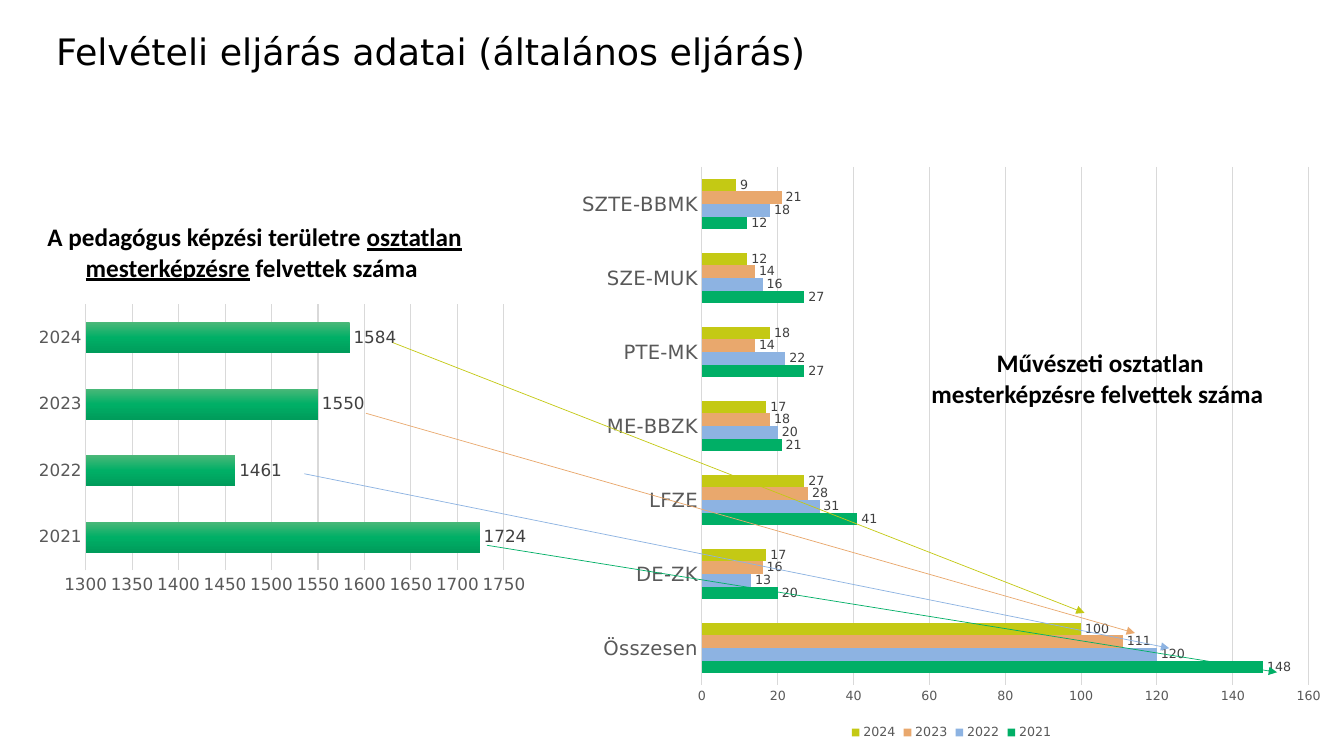
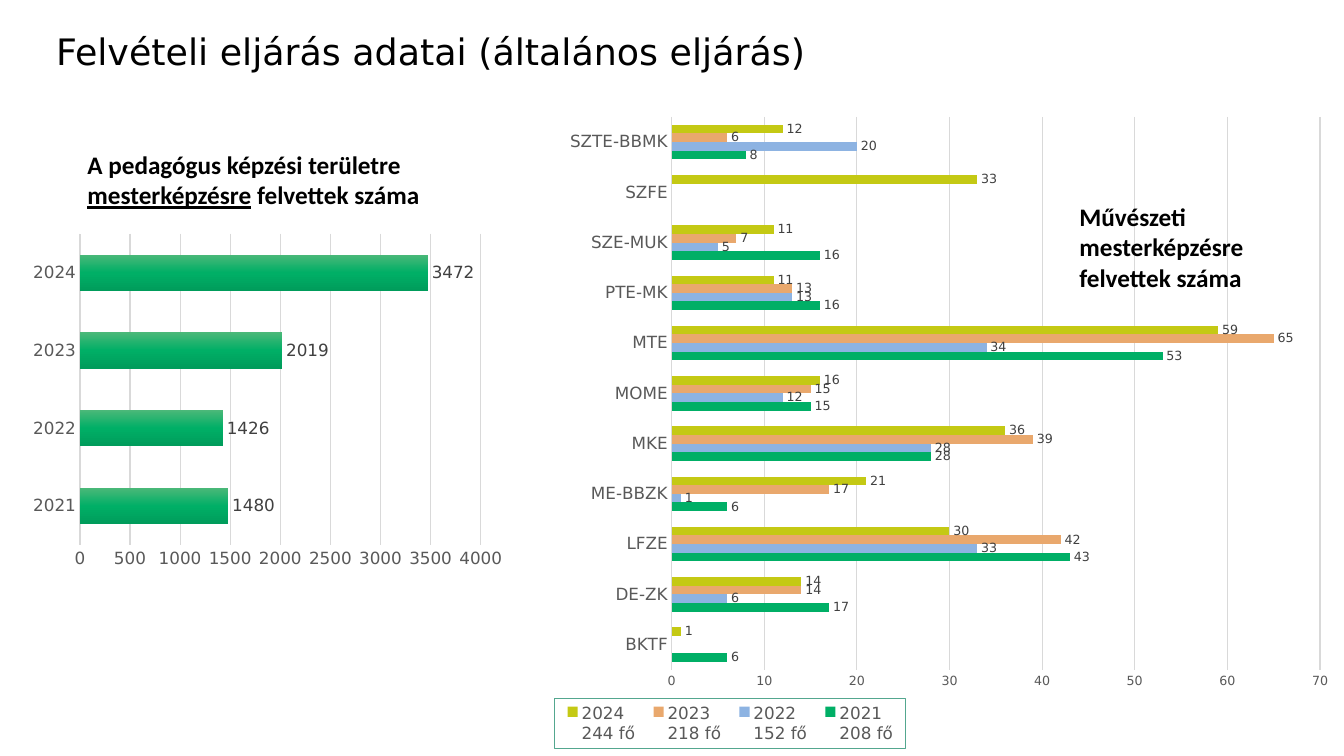
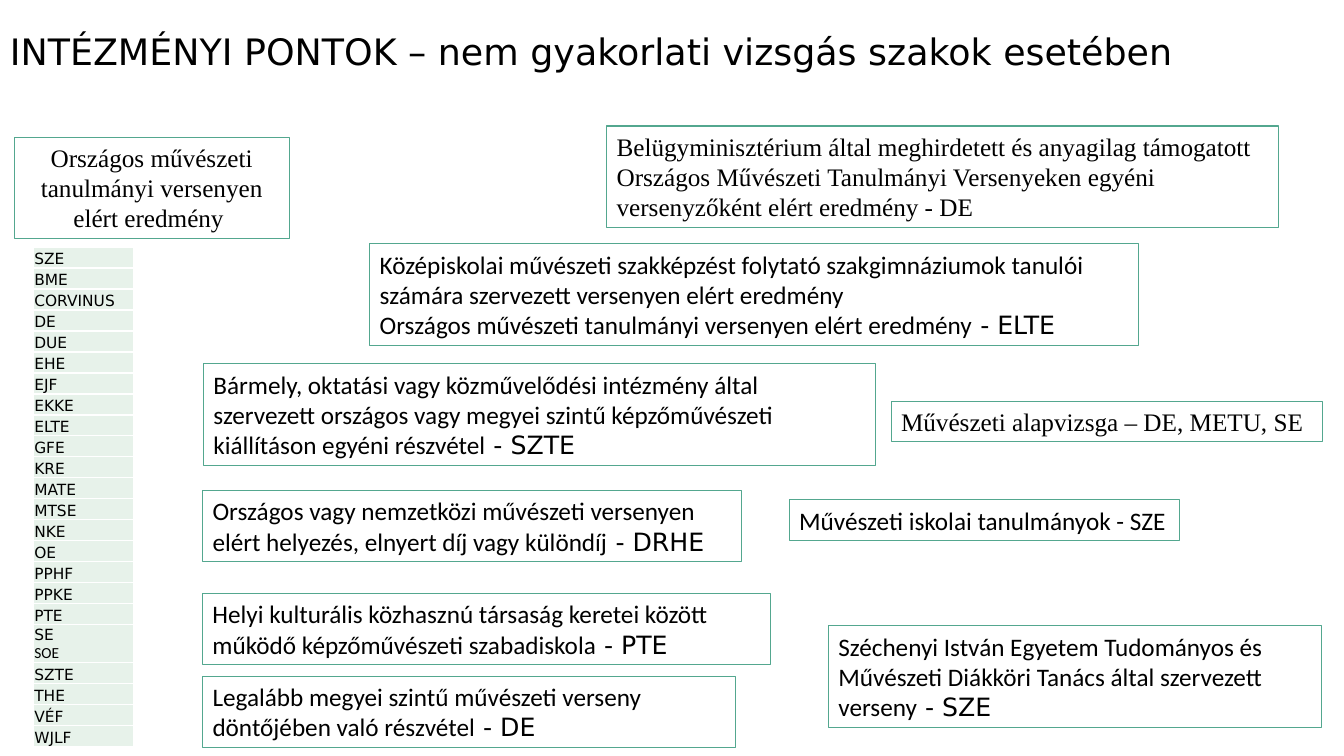
from copy import deepcopy

from lxml import etree
from pptx import Presentation
from pptx.chart.data import CategoryChartData
from pptx.dml.color import RGBColor
from pptx.enum.chart import XL_CHART_TYPE, XL_LABEL_POSITION, XL_LEGEND_POSITION, XL_TICK_MARK
from pptx.enum.shapes import MSO_CONNECTOR, MSO_SHAPE
from pptx.enum.text import MSO_ANCHOR, PP_ALIGN
from pptx.oxml import parse_xml
from pptx.oxml.ns import nsdecls, qn
from pptx.util import Pt

BARS = XL_CHART_TYPE.BAR_CLUSTERED
OUT_END = XL_LABEL_POSITION.OUTSIDE_END
BOTTOM = XL_LEGEND_POSITION.BOTTOM
NO_TICK = XL_TICK_MARK.NONE
STRAIGHT = MSO_CONNECTOR.STRAIGHT
RECT = MSO_SHAPE.RECTANGLE
MIDDLE, LOW = MSO_ANCHOR.MIDDLE, MSO_ANCHOR.BOTTOM
LEFT, CENTER = PP_ALIGN.LEFT, PP_ALIGN.CENTER

SANS, BODY, SERIF = "DejaVu Sans", "Calibri", "Times New Roman"
BLACK, WHITE, GRAY, DARK, GRID = "000000", "FFFFFF", "595959", "404040", "D9D9D9"
FRAME, CELL = "53A78F", "E7F2EA"
YEARS = ["2021", "2022", "2023", "2024"]
HUES = ["00AF66", "8DB3E2", "E9A86D", "C4C914"]
SHADES = [(0, "4BB879"), (0.5, "00AF66"), (1, "009C5B")]
LINE_H, PAD = 21.8, 7.2

ADMIT = "Felvételi eljárás adatai (általános eljárás)"
BOLD = {"name": BODY, "size": Pt(18), "bold": True}
LINED = {**BOLD, "underline": True}

# Charts: frame in points, plot area as fractions of the frame
CHART_PAGES = [
    {
        "total": {
            "at": (21.6, 213.1, 360, 216), "plot": (0.11, 0.02, 0.83, 0.88),
            "cats": YEARS, "series": [("Felvettek", [1724, 1461, 1550, 1584])],
            "scale": (1300, 1750, 50), "sizes": (12, 12, 12),
        },
        "arts": {
            "at": (405.4, 110.9, 548.6, 420.5), "plot": (0.175, 0.02, 0.79, 0.88),
            "cats": ["Összesen", "DE-ZK", "LFZE", "ME-BBZK", "PTE-MK", "SZE-MUK", "SZTE-BBMK"],
            "series": list(zip(YEARS, [
                [148, 20, 41, 21, 27, 27, 12],
                [120, 13, 31, 20, 22, 16, 18],
                [111, 16, 28, 18, 14, 14, 21],
                [100, 17, 27, 17, 18, 12, 9],
            ])),
            "scale": (0, 160, 20), "sizes": (14, 9, 9), "legend": 9,
        },
        "labels": [
            ((21.6, 154.8, 320.4), 2, CENTER, [
                ("A pedagógus képzési területre ", BOLD),
                ("osztatlan mesterképzésre", LINED), (" felvettek száma ", BOLD)]),
            ((652.3, 244.8, 267.1), 2, CENTER, [
                ("Művészeti osztatlan mesterképzésre felvettek száma ", BOLD)]),
        ],
        "arrows": [
            (347.8, 389.5, 912.2, 480.2),
            (217.4, 338.4, 835.2, 463),
            (261.4, 295.2, 810.7, 452.2),
            (280.8, 244.8, 774.7, 437.8),
        ],
    },
    {
        "total": {
            "at": (17.3, 162, 349.2, 249.8), "plot": (0.114, 0.02, 0.82, 0.89),
            "cats": YEARS, "series": [("Felvettek", [1480, 1426, 2019, 3472])],
            "scale": (0, 4000, 500), "sizes": (12, 12, 12),
        },
        "arts": {
            "at": (396, 74.2, 563.8, 465.8), "plot": (0.148, 0.02, 0.822, 0.848),
            "cats": ["BKTF", "DE-ZK", "LFZE", "ME-BBZK", "MKE", "MOME", "MTE",
                     "PTE-MK", "SZE-MUK", "SZFE", "SZTE-BBMK"],
            "series": [
                ("2021\n208 fő", [6, 17, 43, 6, 28, 15, 53, 16, 16, None, 8]),
                ("2022\n152 fő", [None, 6, 33, 1, 28, 12, 34, 13, 5, None, 20]),
                ("2023\n218 fő", [None, 14, 42, 17, 39, 15, 65, 13, 7, None, 6]),
                ("2024\n244 fő", [1, 14, 30, 21, 36, 16, 59, 11, 11, 33, 12]),
            ],
            "scale": (0, 70, 10), "sizes": (12, 9, 9), "legend": 12,
            "key": (0, 0.912, 0.445, 0.076),
        },
        "labels": [
            ((55.4, 103, 270.7), 2, LEFT, [
                ("A pedagógus képzési területre ", BOLD),
                ("mesterképzésre", LINED), (" felvettek száma", BOLD)]),
            ((763.9, 140.4, 195.8), 3, LEFT, [
                ("Művészeti mesterképzésre felvettek száma", BOLD)]),
        ],
        "arrows": [],
    },
]

POINTS = "INTÉZMÉNYI PONTOK – nem gyakorlati vizsgás szakok esetében"
SCHOOLS = ["SZE", "BME", "CORVINUS", "DE", "DUE", "EHE", "EJF", "EKKE", "ELTE", "GFE", "KRE",
           "MATE", "MTSE", "NKE", "OE", "PPHF", "PPKE", "PTE", "SE\nSOE", "SZTE", "THE", "VÉF",
           "WJLF"]
# Left, top, width; line count; font; text; school
BOXES = [
    ((10.1, 97.9, 196.6), 3, SERIF, "Országos művészeti tanulmányi versenyen elért eredmény ", ""),
    ((433.4, 90, 480.2), 3, SERIF,
     "Belügyminisztérium által meghirdetett és anyagilag támogatott Országos Művészeti "
     "Tanulmányi Versenyeken egyéni versenyzőként elért eredmény - DE", ""),
    ((145.4, 259.9, 480.2), 3, BODY,
     "Bármely, oktatási vagy közművelődési intézmény által szervezett országos vagy megyei "
     "szintű képzőművészeti kiállításon egyéni részvétel", " - SZTE"),
    ((264.2, 174.2, 549.4), 3, BODY,
     "Középiskolai művészeti szakképzést folytató szakgimnáziumok tanulói számára szervezett "
     "versenyen elért eredmény\nOrszágos művészeti tanulmányi versenyen elért eredmény",
     " - ELTE"),
    ((144.7, 483.1, 380.9), 2, BODY,
     "Legalább megyei szintű művészeti verseny döntőjében való részvétel", " - DE"),
    ((636.5, 286.6, 308.2), 1, SERIF, "Művészeti alapvizsga – DE, METU, SE", ""),
    ((563.8, 357.1, 278.6), 1, BODY, "Művészeti iskolai tanulmányok - SZE", ""),
    ((144.7, 350.6, 385.2), 2, BODY,
     "Országos vagy nemzetközi művészeti versenyen elért helyezés, elnyert díj vagy különdíj",
     " - DRHE"),
    ((591.8, 447.1, 352.1), 3, BODY,
     "Széchenyi István Egyetem Tudományos és Művészeti Diákköri Tanács által szervezett verseny",
     " - SZE"),
    ((144.7, 424.1, 405.4), 2, BODY,
     "Helyi kulturális közhasznú társaság keretei között működő képzőművészeti szabadiskola",
     " - PTE"),
]


def rgb(code):
    return RGBColor.from_string(code)


def pts(vals):
    return [Pt(v) for v in vals]


def style(font, color=BLACK, **vals):
    for key, val in vals.items():
        setattr(font, key, val)
    font.color.rgb = rgb(color)


def stroke(line, color, width):
    line.color.rgb = rgb(color)
    line.width = Pt(width)


def write(para, runs):
    """Add (text, format) runs; a newline becomes a line break."""
    for text, form in runs:
        for num, part in enumerate(text.split("\n")):
            if num:
                para.add_line_break()
            run = para.add_run()
            run.text = part
            style(run.font, **form)


def add_title(slide, text, left=33, width=828):
    frame = slide.shapes.add_textbox(*pts((left, 0, width, 74))).text_frame
    frame.word_wrap = True
    frame.vertical_anchor = MIDDLE
    frame.margin_top = Pt(5.8)
    para = frame.paragraphs[0]
    para.line_spacing = 0.9
    write(para, [(text, {"name": SANS, "size": Pt(26)})])


def add_text(slide, spot, lines, align, runs, framed=False):
    area = pts((*spot, PAD + LINE_H * lines))
    if framed:
        shape = slide.shapes.add_shape(RECT, *area)
        shape.shadow.inherit = False
        shape.fill.background()
        stroke(shape.line, FRAME, 0.75)
    else:
        shape = slide.shapes.add_textbox(*area)
    frame = shape.text_frame
    frame.word_wrap = True
    frame.vertical_anchor = MSO_ANCHOR.TOP
    para = frame.paragraphs[0]
    para.alignment = align
    write(para, runs)


def layout(area, inner=False):
    """Build a manual chart layout from fractions of the chart frame."""
    node = parse_xml(f"<c:layout {nsdecls('c')}><c:manualLayout/></c:layout>")
    vals = [("layoutTarget", "inner")] if inner else []
    vals += [("xMode", "edge"), ("yMode", "edge"), *zip("xywh", area)]
    for tag, val in vals:
        etree.SubElement(node[0], qn(f"c:{tag}")).set("val", str(val))
    return node


def drop_layout(node):
    for old in node.findall(qn("c:layout")):
        node.remove(old)


def shade(series):
    fill = series.format.fill
    fill.gradient()
    fill.gradient_angle = 270
    stops = next(series._element.iter(qn("a:gsLst")))
    stops.insert(1, deepcopy(stops[0]))
    for stop, (pos, color) in zip(fill.gradient_stops, SHADES):
        stop.position = pos
        stop.color.rgb = rgb(color)


def add_legend(chart, size, key):
    chart.has_legend = True
    legend = chart.legend
    legend.position = BOTTOM
    legend.include_in_layout = False
    style(legend.font, GRAY, name=SANS, size=Pt(size))
    if key:
        node = legend._element
        drop_layout(node)
        node.find(qn("c:legendPos")).addnext(layout(key))
        node.find(qn("c:overlay")).addnext(parse_xml(
            f"<c:spPr {nsdecls('c', 'a')}><a:ln w='9525'><a:solidFill>"
            f"<a:srgbClr val='{FRAME}'/></a:solidFill></a:ln></c:spPr>"))


def add_bars(slide, data):
    source = CategoryChartData()
    source.categories = data["cats"]
    for name, vals in data["series"]:
        source.add_series(name, vals)
    chart = slide.shapes.add_chart(BARS, *pts(data["at"]), source).chart
    style(chart.font, name=SANS, size=Pt(10))
    chart.has_title = False
    many = len(data["series"]) > 1
    cat_size, val_size, tag_size = data["sizes"]

    cat, val = chart.category_axis, chart.value_axis
    for axis, size in ((cat, cat_size), (val, val_size)):
        axis.major_tick_mark = axis.minor_tick_mark = NO_TICK
        style(axis.tick_labels.font, GRAY, name=SANS, size=Pt(size))
    stroke(cat.format.line, GRID, 0.75 if many else 1)
    val.format.line.fill.background()
    val.has_major_gridlines = True
    stroke(val.major_gridlines.format.line, GRID, 0.75)
    val.minimum_scale, val.maximum_scale, val.major_unit = data["scale"]

    plot = chart.plots[0]
    plot.vary_by_categories = False
    plot.gap_width, plot.overlap = (182, 0) if many else (115, -20)
    for series, hue in zip(plot.series, HUES):
        if many:
            series.format.fill.solid()
            series.format.fill.fore_color.rgb = rgb(hue)
        else:
            shade(series)
        tags = series.data_labels
        tags.show_value = True
        tags.position = OUT_END
        style(tags.font, DARK, name=SANS, size=Pt(tag_size))

    chart.has_legend = False
    if many:
        add_legend(chart, data["legend"], data.get("key"))
    area = chart._chartSpace.chart.plotArea
    drop_layout(area)
    area.insert(0, layout(data["plot"], inner=True))


def add_arrow(slide, ends, color):
    arrow = slide.shapes.add_connector(STRAIGHT, *pts(ends))
    stroke(arrow.line, color, 0.5)
    props = arrow._element.spPr
    etree.SubElement(props.find(qn("a:ln")), qn("a:tailEnd")).set("type", "triangle")
    etree.SubElement(props, qn("a:effectLst"))


def edge(cell):
    """Give a cell white borders; they must come before its fill."""
    props = cell._tc.get_or_add_tcPr()
    for num, side in enumerate(("lnL", "lnR", "lnT", "lnB")):
        props.insert(num, parse_xml(
            f"<a:{side} {nsdecls('a')} w='12700'><a:solidFill>"
            f"<a:srgbClr val='{WHITE}'/></a:solidFill></a:{side}>"))


def add_schools(slide):
    count, row_h = len(SCHOOLS), 15
    area = pts((23.8, 176.4, 71.3, row_h * count))
    table = slide.shapes.add_table(count, 1, *area).table
    table.first_row = table.horz_banding = False
    for num, text in enumerate(SCHOOLS):
        table.rows[num].height = Pt(row_h)
        cell = table.cell(num, 0)
        cell.fill.solid()
        cell.fill.fore_color.rgb = rgb(CELL)
        edge(cell)
        cell.vertical_anchor = LOW
        cell.margin_left = cell.margin_right = cell.margin_top = Pt(0.7)
        cell.margin_bottom = 0
        frame = cell.text_frame
        for pos, name in enumerate(text.split("\n")):
            para = frame.add_paragraph() if pos else frame.paragraphs[0]
            write(para, [(name, {"name": BODY if pos else SANS, "size": Pt(11)})])


def main():
    deck = Presentation()
    deck.slide_width, deck.slide_height = Pt(960), Pt(540)
    blank = deck.slide_layouts[6]

    for page in CHART_PAGES:
        slide = deck.slides.add_slide(blank)
        add_title(slide, ADMIT)
        add_bars(slide, page["total"])
        add_bars(slide, page["arts"])
        for label in page["labels"]:
            add_text(slide, *label)
        for ends, hue in zip(page["arrows"], HUES):
            add_arrow(slide, ends, hue)

    slide = deck.slides.add_slide(blank)
    add_title(slide, POINTS, 0, 861)
    add_schools(slide)
    for num, (spot, lines, font, text, school) in enumerate(BOXES):
        runs = [(text, {"name": font, "size": Pt(18)})]
        if school:
            runs.append((school, {"name": SANS, "size": Pt(18)}))
        add_text(slide, spot, lines, LEFT if num else CENTER, runs, framed=True)

    deck.save("out.pptx")


if __name__ == "__main__":
    main()
